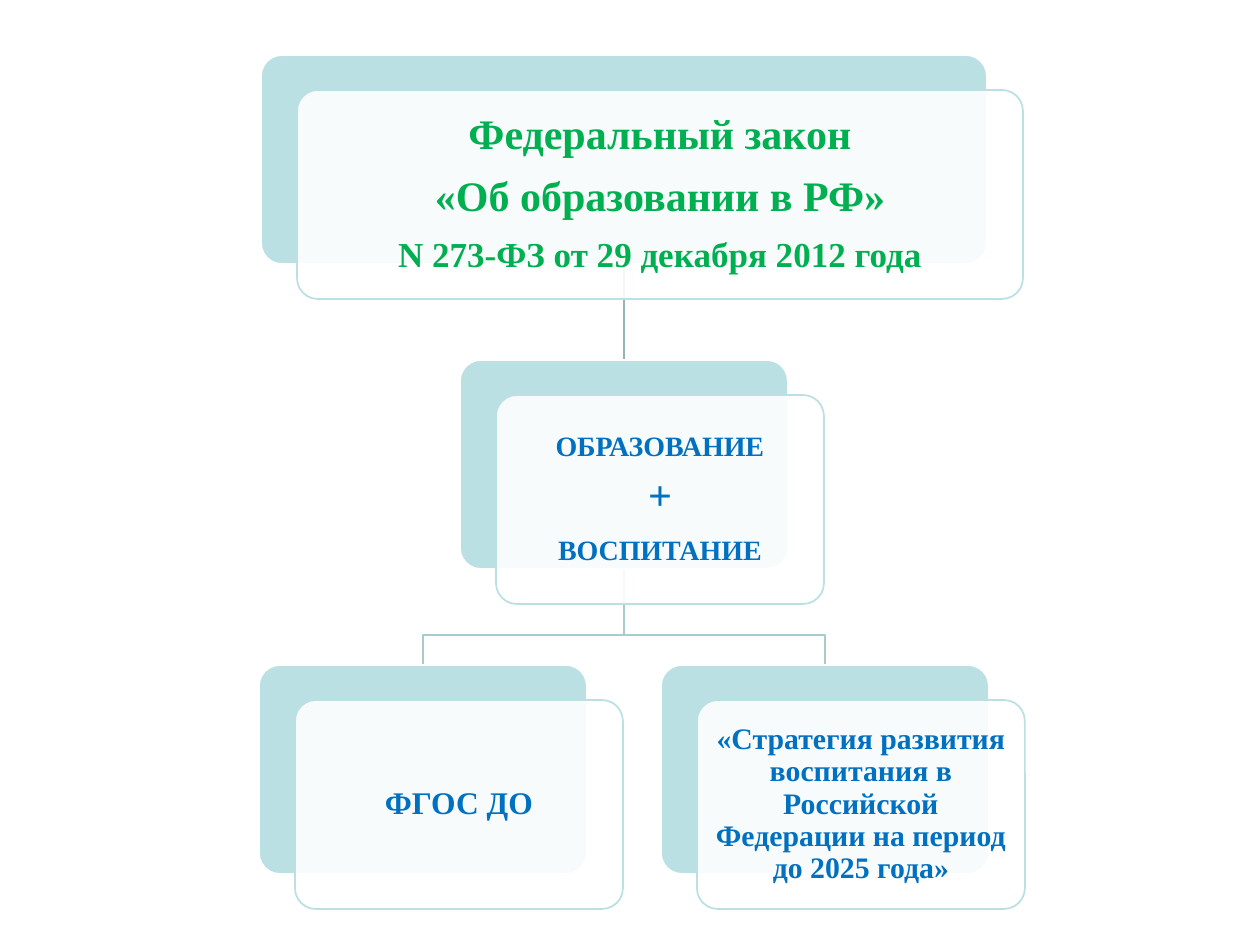
from dataclasses import dataclass

from lxml import etree
from pptx import Presentation
from pptx import util as u
from pptx.dml.color import RGBColor
from pptx.enum import shapes, text
from pptx.oxml.ns import qn

PX = 914400 // 126  # EMU in one px
SLIDE_W, SLIDE_H = 1260, 945
CENTER, TOP, ROW_STEP = 624, 55, 305
CARD_H, LAW_W, CARD_W = 209, 726, 328
BRANCH_SHIFT = 201
FRONT_DX, FRONT_DY = 36, 35


@dataclass(frozen=True)
class Theme:
    font: str = "Times New Roman"
    back: str = "BBE0E3"
    front: str = "FFFFFF"
    front_alpha: int = 90
    trunk: str = "96B3B6"
    branch: str = "AACBCE"
    law: str = "00B050"
    topic: str = "0070C0"
    title: int = 24
    subtitle: int = 20
    words: int = 16
    standard: int = 18
    strategy: int = 17


THEME = Theme()


def rgb(color):
    return RGBColor.from_string(color)


def set_line(part, color):
    part.line.color.rgb = rgb(color)
    part.line.width = u.Pt(1)


def write(frame, paragraphs, color, margin):
    """Write centred bold (words, size) paragraphs."""
    frame.word_wrap = True
    frame.vertical_anchor = text.MSO_ANCHOR.MIDDLE
    frame.margin_left = frame.margin_right = margin * PX
    frame.margin_top = frame.margin_bottom = margin * PX
    for i, (words, size) in enumerate(paragraphs):
        para = frame.add_paragraph() if i else frame.paragraphs[0]
        para.alignment = text.PP_ALIGN.CENTER
        para.line_spacing = 0.9
        if i < len(paragraphs) - 1:
            para.space_after = u.Pt(round(size * 0.4, 1))
        run = para.add_run()
        run.text = words
        run.font.name = THEME.font
        run.font.size = u.Pt(size)
        run.font.bold = True
        run.font.color.rgb = rgb(color)


def rounded_box(slide, box, fill, outline):
    panel = slide.shapes.add_shape(
        shapes.MSO_SHAPE.ROUNDED_RECTANGLE, *(v * PX for v in box))
    panel.adjustments[0] = 0.1
    panel.shadow.inherit = False
    panel.fill.solid()
    panel.fill.fore_color.rgb = rgb(fill)
    set_line(panel, outline)
    return panel


def card(slide, box, paragraphs, color=THEME.topic, margin=9):
    """Place a tinted box under a shifted, translucent text box; return the former."""
    x, y, w, h = box
    back = rounded_box(slide, box, THEME.back, THEME.front)
    front = rounded_box(slide, (x + FRONT_DX, y + FRONT_DY, w, h),
                        THEME.front, THEME.back)
    fill_color = front.fill._xPr.find(qn("a:solidFill"))[0]
    etree.SubElement(fill_color, qn("a:alpha"),
                     val=str(THEME.front_alpha * 1000))
    write(front.text_frame, paragraphs, color, margin)
    return back


def branch(slide, x1, y1, x2, y2):
    """Draw a bent line that goes down, across and down."""
    bend = y2 - 30
    builder = slide.shapes.build_freeform(x1, y1, scale=PX)
    builder.add_line_segments([(x1, bend), (x2, bend), (x2, y2)], close=False)
    line = builder.convert_to_shape()
    line.shadow.inherit = False
    line.fill.background()
    set_line(line, THEME.branch)


def trunk_line(slide):
    line = slide.shapes.add_connector(shapes.MSO_CONNECTOR.STRAIGHT, 0, 0, 0, 0)
    set_line(line, THEME.trunk)
    etree.SubElement(line._element.spPr, qn("a:effectLst"))
    return line


def hierarchy(slide):
    def box(row, center, width):
        return center - width // 2, TOP + row * ROW_STEP, width, CARD_H

    left, right = CENTER - BRANCH_SHIFT, CENTER + BRANCH_SHIFT
    for end in (right, left):
        branch(slide, CENTER, TOP + ROW_STEP + CARD_H, end, TOP + 2 * ROW_STEP)
    trunk = trunk_line(slide)

    law = card(slide, box(0, CENTER, LAW_W), [
        ("Федеральный закон", THEME.title),
        ("«Об образовании в РФ»", THEME.title),
        ("N 273-ФЗ от 29 декабря 2012 года", THEME.subtitle),
    ], color=THEME.law, margin=13)
    education = card(slide, box(1, CENTER, CARD_W), [
        ("ОБРАЗОВАНИЕ", THEME.words),
        ("+", THEME.title),
        ("ВОСПИТАНИЕ", THEME.words),
    ])
    card(slide, box(2, left, CARD_W), [("ФГОС ДО", THEME.standard)])
    card(slide, box(2, right, CARD_W), [
        ("«Стратегия развития воспитания в Российской Федерации "
         "на период до 2025 года»", THEME.strategy),
    ])
    trunk.begin_connect(law, 2)
    trunk.end_connect(education, 0)


def main():
    deck = Presentation()
    deck.slide_width, deck.slide_height = u.Inches(10), u.Inches(7.5)
    hierarchy(deck.slides.add_slide(deck.slide_layouts[6]))
    deck.save("out.pptx")


if __name__ == "__main__":
    main()
